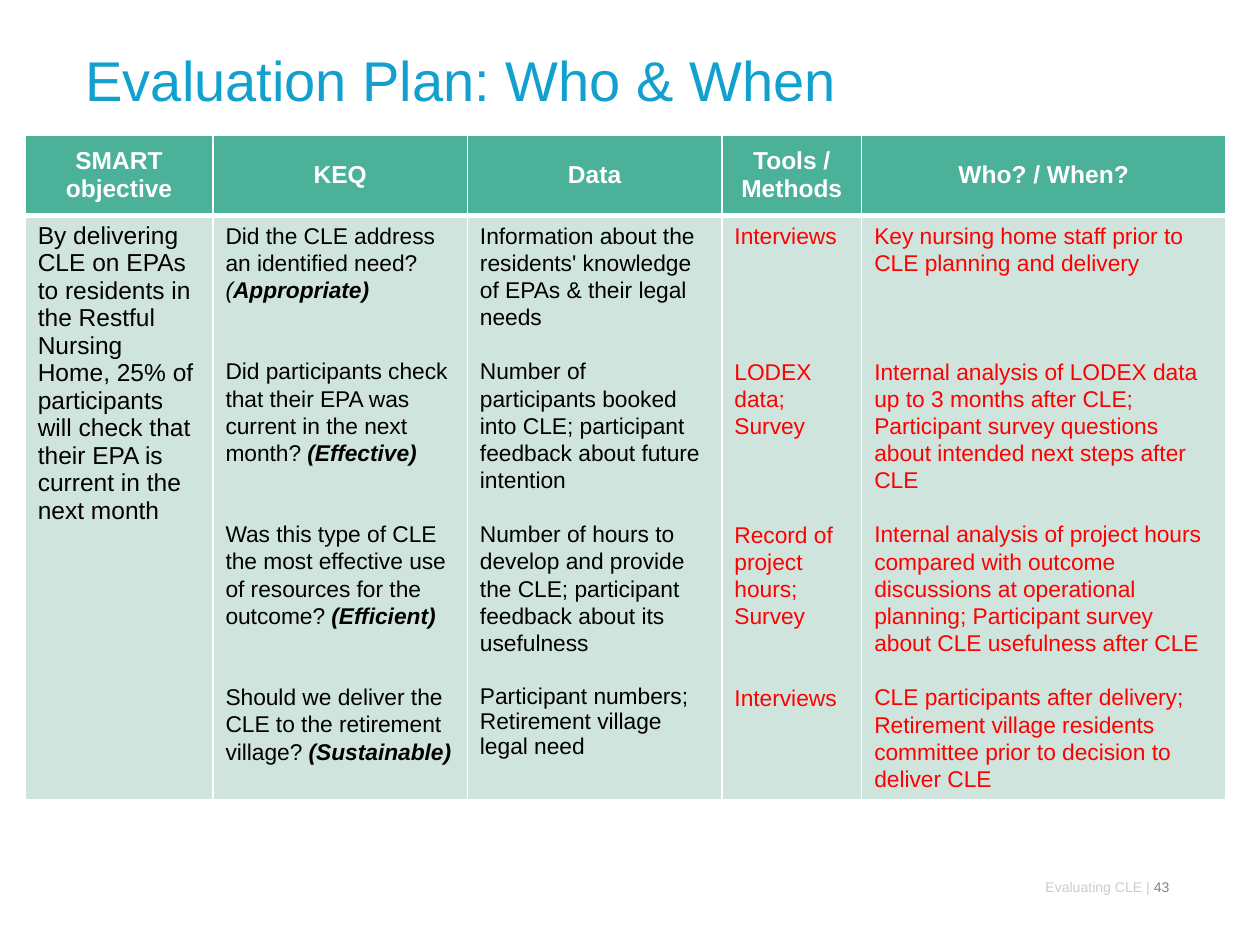
"""Build the evaluation plan slide: a title, a five-column table and a footer."""
from lxml import etree
from pptx import Presentation
from pptx import util as u
from pptx.dml.color import RGBColor
from pptx.enum import text
from pptx.oxml import ns


def style(run, size, color, bold=False, italic=False):
    run.font.name = "Arial"
    run.font.size = u.Pt(size)
    run.font.color.rgb = RGBColor.from_string(color)
    run.font.bold = bold
    run.font.italic = italic


def add_border(cell, side, points):
    properties = cell._tc.get_or_add_tcPr()
    line = etree.SubElement(properties, ns.qn(f"a:{side}"), w=str(u.Pt(points)))
    fill = etree.SubElement(line, ns.qn("a:solidFill"))
    etree.SubElement(fill, ns.qn("a:srgbClr"), val="FFFFFF")


LINE = 15.55
BLACK, RED = "000000", "FF0000"
HEADER_FILL, BODY_FILL = "4CB199", "D0E4DE"
columns = [
    ("SMART objective", 1.49, 14, BLACK, [
        (0, ("By delivering CLE on EPAs to residents in the Restful Nursing Home, 25% of "
             "participants will check that their EPA is current in the next month", "")),
    ]),
    ("KEQ", 2.02, 13, BLACK, [
        (0, ("Did the CLE address an identified need?", "")),
        (0, ("(", "i"), ("Appropriate)", "bi")),
        (2, ("Did participants check that their EPA was current in the next month? ", ""),
         ("(Effective)", "bi")),
        (2, ("Was this type of CLE the most effective use of resources for the outcome? ", ""),
         ("(Efficient)", "bi")),
        (2, ("Should we deliver the CLE to the retirement village? ", ""),
         ("(Sustainable)", "bi")),
    ]),
    ("Data", 2.02, 13, BLACK, [
        (0, ("Information about the residents' knowledge of EPAs & their legal needs", "")),
        (1, ("Number of participants booked into CLE; participant feedback about future "
             "intention", "")),
        (1, ("Number of hours to develop and provide the CLE; participant feedback about "
             "its usefulness", "")),
        (1, ("Participant numbers;", "")),
        (0, ("Retirement village legal need", "")),
    ]),
    ("Tools / Methods", 1.11, 13, RED, [
        (0, ("Interviews", "")),
        (4, ("LODEX data;", "")),
        (0, ("Survey", "")),
        (3, ("Record of project hours;", "")),
        (0, ("Survey", "")),
        (2, ("Interviews", "")),
    ]),
    ("Who? / When?", 2.89, 13, RED, [
        (0, ("Key nursing home staff prior to CLE planning and delivery", "")),
        (3, ("Internal analysis of LODEX data up to 3 months after CLE; Participant survey "
             "questions about intended next steps after CLE", "")),
        (1, ("Internal analysis of project hours compared with outcome discussions at "
             "operational planning; Participant survey about CLE usefulness after CLE", "")),
        (1, ("CLE participants after delivery; Retirement village residents committee prior "
             "to decision to deliver CLE", "")),
    ]),
]
single_spaced = ("Participant numbers;", "Retirement village legal need")

presentation = Presentation()
presentation.slide_width, presentation.slide_height = u.Inches(10), u.Inches(7.5)
slide = presentation.slides.add_slide(presentation.slide_layouts[5])

title = slide.shapes.title
title.left, title.top = u.Inches(0.58), u.Inches(0.24)
title.width, title.height = u.Inches(8.5), u.Inches(0.77)
title.text_frame.text = "Evaluation Plan: Who & When"
title.text_frame.vertical_anchor = text.MSO_ANCHOR.MIDDLE
title.text_frame.paragraphs[0].alignment = text.PP_ALIGN.LEFT
style(title.text_frame.paragraphs[0].runs[0], 32, "12A1CE")

table = slide.shapes.add_table(2, len(columns), u.Inches(0.2), u.Inches(1.07),
                               u.Inches(9.53), u.Inches(5.28)).table
table.rows[0].height, table.rows[1].height = u.Inches(0.64), u.Inches(4.64)

for index, (heading, width, size, color, entries) in enumerate(columns):
    table.columns[index].width = u.Inches(width)
    header, body = table.cell(0, index), table.cell(1, index)
    add_border(header, "lnB", 3)
    add_border(body, "lnT", 3)
    for cell, fill in ((header, HEADER_FILL), (body, BODY_FILL)):
        cell.fill.solid()
        cell.fill.fore_color.rgb = RGBColor.from_string(fill)

    header.text_frame.text = heading
    header.vertical_anchor = text.MSO_ANCHOR.MIDDLE
    paragraph = header.text_frame.paragraphs[0]
    paragraph.alignment = text.PP_ALIGN.CENTER
    style(paragraph.runs[0], 14, "FFFFFF", bold=True)

    if heading == "Data":
        body.margin_right = u.Inches(0.14)
    for number, (blank_lines, *pieces) in enumerate(entries):
        frame = body.text_frame
        paragraph = frame.add_paragraph() if number else frame.paragraphs[0]
        if size == 13 and pieces[0][0] not in single_spaced:
            paragraph.line_spacing = 1.07
        paragraph.space_before = u.Pt(round(blank_lines * LINE, 1))
        for wording, emphasis in pieces:
            run = paragraph.add_run()
            run.text = wording
            style(run, size, color, bold="b" in emphasis, italic="i" in emphasis)

footer = slide.shapes.add_textbox(u.Inches(5.3), u.Inches(6.92), u.Inches(4.08), u.Inches(0.25))
footer.text_frame.word_wrap = True
paragraph = footer.text_frame.paragraphs[0]
paragraph.alignment = text.PP_ALIGN.RIGHT
for wording, color in (("Evaluating CLE | ", "CCCCCC"), ("43", "818382")):
    run = paragraph.add_run()
    run.text = wording
    style(run, 8, color)

presentation.save("out.pptx")
